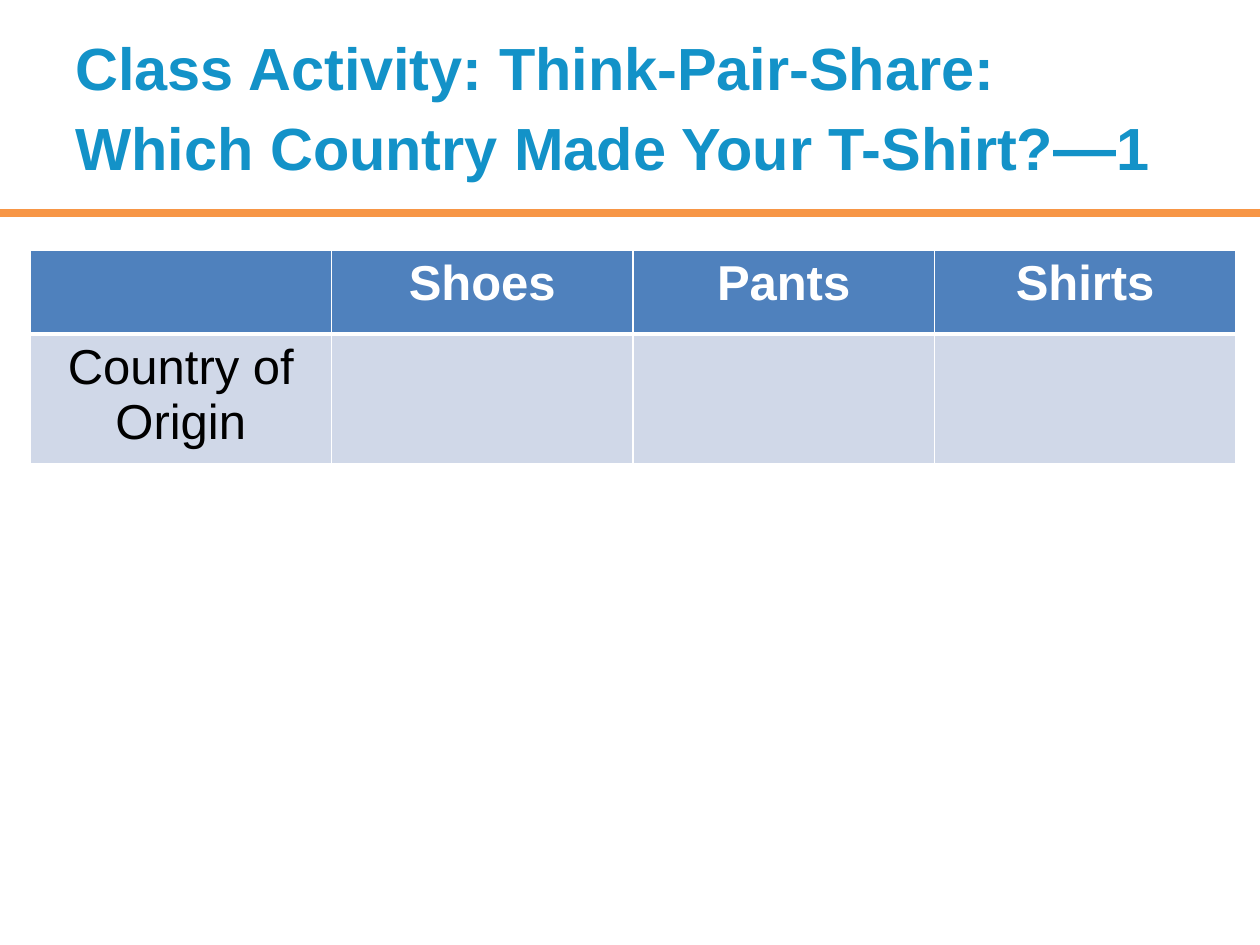
from lxml import etree
from pptx import Presentation
from pptx.dml.color import RGBColor
from pptx.enum.shapes import MSO_CONNECTOR
from pptx.enum.text import MSO_ANCHOR, MSO_AUTO_SIZE, PP_ALIGN
from pptx.oxml.ns import qn
from pptx.util import Pt

EMU_PER_PX = 914400 / 126
SLIDE_WIDTH, SLIDE_HEIGHT = 1260, 945
TITLE_ONLY = 5
STRAIGHT = MSO_CONNECTOR.STRAIGHT
LEFT, CENTER = PP_ALIGN.LEFT, PP_ALIGN.CENTER
MIDDLE = MSO_ANCHOR.MIDDLE
NO_AUTOFIT = MSO_AUTO_SIZE.NONE

COLORS = {
    "title": "1392C8",
    "rule": "F79646",
    "header": "4F81BD",
    "body": "D0D8E8",
    "white": "FFFFFF",
    "black": "000000",
}
TITLE_RUNS = [
    ("Class Activity: Think-Pair-Share: Which Country Made Your T-Shirt?", 34),
    ("—", 36),
    ("1", 34),
]
CLOTHING_ROWS = [
    ["", "Shoes", "Pants", "Shirts"],
    ["Country of Origin", "", "", ""],
]
ROW_HEIGHTS = [84, 130]
ROW_STYLES = [
    {"fill": "header", "text": "white", "bold": True,
     "borders": {"lnL": 1, "lnR": 1, "lnT": 1, "lnB": 3}},
    {"fill": "body", "text": "black", "bold": False,
     "borders": {"lnL": 1, "lnR": 1, "lnT": 3, "lnB": 1}},
]


def px(length):
    return round(length * EMU_PER_PX)


def rgb(name):
    return RGBColor.from_string(COLORS[name])


def format_font(font, color, **values):
    for attribute, value in {"name": "Arial", **values}.items():
        setattr(font, attribute, value)
    font.color.rgb = rgb(color)


def add_title(slide, left, top, width, height):
    title = slide.shapes.title
    box = {"left": left, "top": top, "width": width, "height": height}
    for attribute, length in box.items():
        setattr(title, attribute, px(length))
    frame = title.text_frame
    frame_format = {"word_wrap": True, "auto_size": NO_AUTOFIT,
                    "vertical_anchor": MIDDLE}
    for attribute, value in frame_format.items():
        setattr(frame, attribute, value)
    heading = frame.paragraphs[0]
    heading.alignment = LEFT
    heading.line_spacing = 1.07
    for words, size in TITLE_RUNS:
        run = heading.add_run()
        run.text = words
        format_font(run.font, "title", size=Pt(size), bold=True)


def add_rule(slide, left, top, width):
    rule = slide.shapes.add_connector(
        STRAIGHT, px(left), px(top), px(left + width), px(top))
    rule.line.color.rgb = rgb("rule")
    rule.line.width = Pt(4.5)
    etree.SubElement(rule._element.spPr, qn("a:effectLst"))


def set_borders(cell, widths):
    """Put white lines, in points, ahead of the cell's fill."""
    properties = cell._tc.get_or_add_tcPr()
    for position, (side, width) in enumerate(widths.items()):
        border = etree.Element(qn(f"a:{side}"), w=str(Pt(width)))
        fill = etree.SubElement(border, qn("a:solidFill"))
        etree.SubElement(fill, qn("a:srgbClr"), val=COLORS["white"])
        properties.insert(position, border)


def add_clothing_table(slide, left, top, width):
    table = slide.shapes.add_table(
        len(CLOTHING_ROWS), len(CLOTHING_ROWS[0]),
        px(left), px(top), px(width), px(sum(ROW_HEIGHTS))).table
    for row, height, labels, style in zip(
            table.rows, ROW_HEIGHTS, CLOTHING_ROWS, ROW_STYLES):
        row.height = px(height)
        for cell, label in zip(row.cells, labels):
            cell.fill.solid()
            cell.fill.fore_color.rgb = rgb(style["fill"])
            set_borders(cell, style["borders"])
            if label:
                paragraph = cell.text_frame.paragraphs[0]
                paragraph.alignment = CENTER
                run = paragraph.add_run()
                run.text = label
                format_font(run.font, style["text"], size=Pt(28),
                            bold=style["bold"])


def main():
    presentation = Presentation()
    presentation.slide_width = px(SLIDE_WIDTH)
    presentation.slide_height = px(SLIDE_HEIGHT)
    slide = presentation.slides.add_slide(
        presentation.slide_layouts[TITLE_ONLY])
    add_rule(slide, 0, 213, SLIDE_WIDTH)
    add_title(slide, 63, 0, 1134, 210)
    add_clothing_table(slide, 30, 250, 1206)
    presentation.save("out.pptx")


if __name__ == "__main__":
    main()
